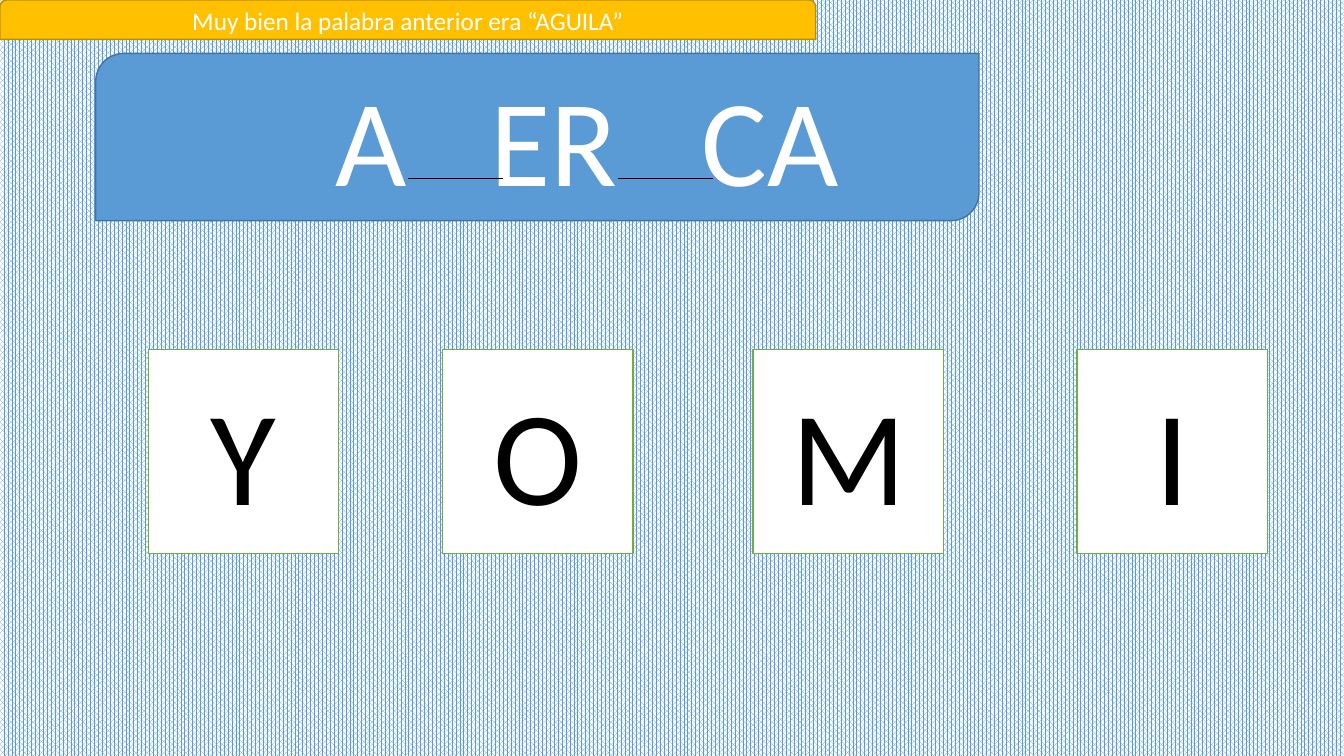
from lxml.etree import SubElement
from pptx import Presentation
from pptx.dml.color import RGBColor
from pptx.enum.dml import MSO_PATTERN
from pptx.enum.shapes import MSO_CONNECTOR, MSO_SHAPE
from pptx.enum.text import MSO_ANCHOR, PP_ALIGN
from pptx.oxml.ns import qn
from pptx.util import Inches, Pt


def paint(color, value):
    color.rgb = RGBColor.from_string(value)


class Board:
    font = "Calibri"
    blue = "5B9BD5"
    white = "FFFFFF"
    black = "000000"

    def __init__(self, deck):
        self.slide = deck.slides.add_slide(deck.slide_layouts[6])

    def backdrop(self):
        fill = self.slide.background.fill
        fill.patterned()
        fill.pattern = MSO_PATTERN.PERCENT_75
        paint(fill.fore_color, self.blue)
        paint(fill.back_color, self.white)

    def box(self, kind, place, fill, edge, parts, size, ink):
        shape = self.slide.shapes.add_shape(kind, *map(Inches, place))
        shape.shadow.inherit = False
        shape.fill.solid()
        paint(shape.fill.fore_color, fill)
        paint(shape.line.color, edge)
        shape.line.width = Pt(1)
        frame = shape.text_frame
        frame.word_wrap = True
        frame.vertical_anchor = MSO_ANCHOR.MIDDLE
        para = frame.paragraphs[0]
        para.alignment = PP_ALIGN.CENTER
        para.font.name = self.font
        para.font.size = Pt(size)
        paint(para.font.color, ink)
        for part in parts:
            para.add_run().text = part
        return shape

    def word(self, place, parts, indent, gap):
        shape = self.box(MSO_SHAPE.ROUND_2_DIAG_RECTANGLE, place, self.blue,
                         "43739E", parts, 88, self.white)
        shape.text_frame.margin_left = Inches(indent)
        for run in shape.text_frame.paragraphs[0].runs:
            if run.text == " ":
                run._r.get_or_add_rPr().set("spc", str(gap * 100))

    def blank(self, left, top, width):
        line = self.slide.shapes.add_connector(
            MSO_CONNECTOR.STRAIGHT, Inches(left), Inches(top),
            Inches(left + width), Inches(top))
        paint(line.line.color, self.black)
        line.line.width = Pt(0.5)
        SubElement(line._element.spPr, qn("a:effectLst"))

    def tile(self, left, letter):
        self.box(MSO_SHAPE.RECTANGLE, (left, 3.47, 1.89, 2.02), self.white,
                 "70AD47", [letter], 96, self.black)

    def banner(self, place, text):
        self.box(MSO_SHAPE.ROUND_2_SAME_RECTANGLE, place, "FFC000",
                 "BD8E00", [text], 18, self.white)


def main():
    deck = Presentation()
    deck.slide_width = Inches(13.33)
    deck.slide_height = Inches(7.5)
    board = Board(deck)
    board.backdrop()
    board.word((0.95, 0.53, 8.76, 1.66), ["A", " ", "ER", " ", "CA"], 1.08, 40)
    for left in (4.05, 6.13):
        board.blank(left, 1.77, 0.94)
    for left, letter in zip((1.47, 4.39, 7.47, 10.68), "YOMI"):
        board.tile(left, letter)
    board.banner((0, 0, 8.09, 0.39), "Muy bien la palabra anterior era “AGUILA”")
    deck.save("out.pptx")


if __name__ == "__main__":
    main()
